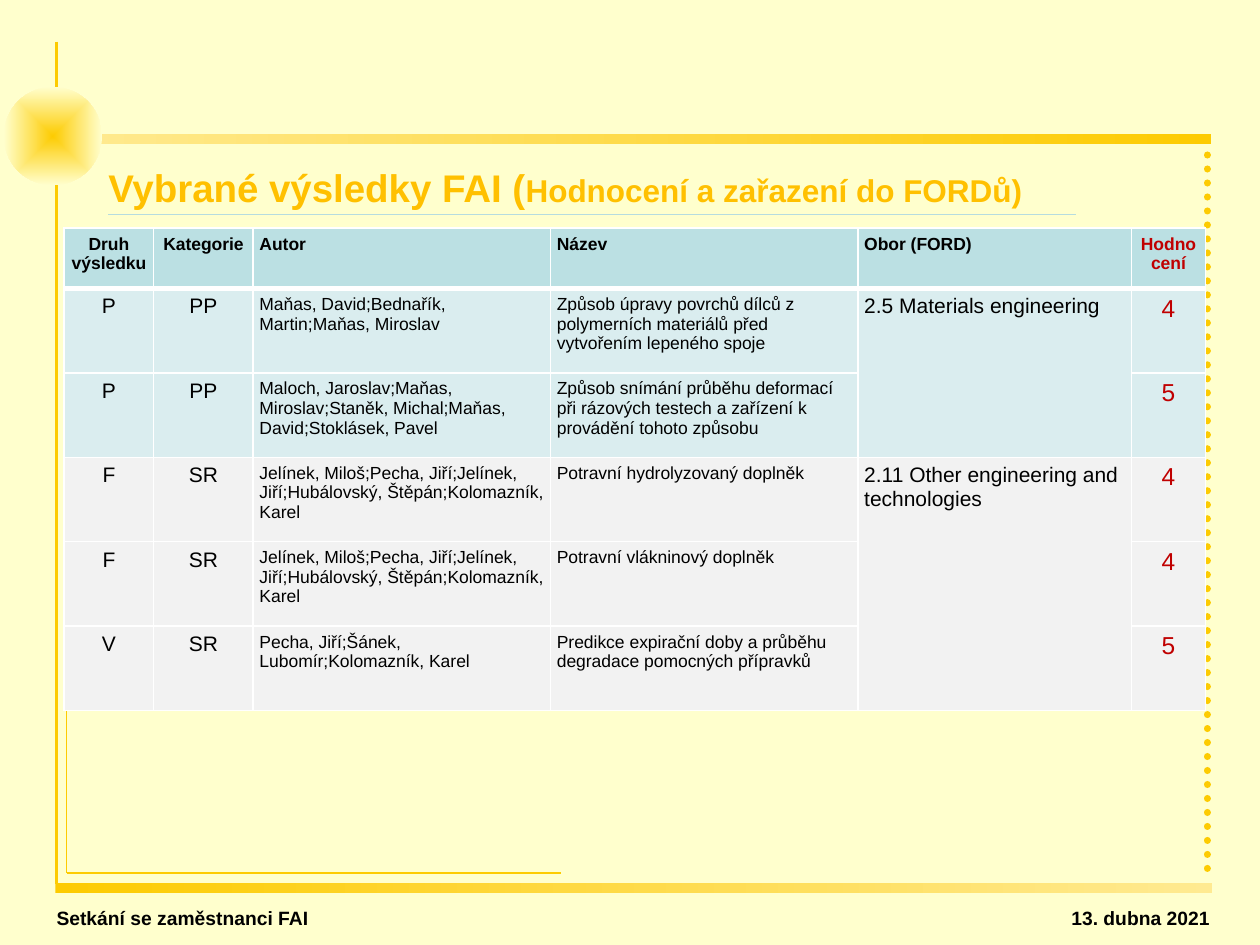
from dataclasses import dataclass

from lxml import etree
from pptx import Presentation
from pptx import util as u
from pptx.dml.color import RGBColor
from pptx.enum import dml, shapes, text
from pptx.oxml import ns


@dataclass(frozen=True)
class Theme:
    """Colours, font and type sizes of the page."""
    paper: str = "FFFFCD"
    gold: str = "FDCB01"
    pale_gold: str = "FFEA91"
    title: str = "FFC000"
    rule: str = "B6DCDF"
    ink: str = "000000"
    score: str = "C00000"
    border: str = "FFFFFF"
    header: str = "BBE0E3"
    patent: str = "DAEDEF"
    other: str = "F2F2F2"
    font: str = "Arial"
    title_size: int = 22
    subtitle_size: int = 18
    score_size: int = 14
    label_size: int = 12
    footer_size: int = 11
    body_size: int = 10


THEME = Theme()
LEFT, CENTER, RIGHT = text.PP_ALIGN.LEFT, text.PP_ALIGN.CENTER, text.PP_ALIGN.RIGHT
COLUMNS, ROWS = 100, 75

HEADINGS = ["Druh výsledku", "Kategorie", "Autor", "Název", "Obor (FORD)", "Hodnocení"]
JELINEK = "Jelínek, Miloš;Pecha, Jiří;Jelínek, Jiří;Hubálovský, Štěpán;Kolomazník, Karel"
RESULTS = [
    ["P", "PP", "Maňas, David;Bednařík, Martin;Maňas, Miroslav",
     "Způsob úpravy povrchů dílců z polymerních materiálů před vytvořením lepeného spoje",
     "2.5 Materials engineering", "4"],
    ["P", "PP", "Maloch, Jaroslav;Maňas, Miroslav;Staněk, Michal;Maňas, David;Stoklásek, Pavel",
     "Způsob snímání průběhu deformací při rázových testech a zařízení k provádění tohoto způsobu",
     "", "5"],
    ["F", "SR", JELINEK, "Potravní hydrolyzovaný doplněk",
     "2.11 Other engineering and technologies", "4"],
    ["F", "SR", JELINEK, "Potravní vlákninový doplněk", "", "4"],
    ["V", "SR", "Pecha, Jiří;Šánek, Lubomír;Kolomazník, Karel",
     "Predikce expirační doby a průběhu degradace pomocných přípravků", "", "5"],
]
COLUMN_WIDTHS = [7.1, 7.9, 23.6, 24.4, 21.7, 5.9]
ROW_HEIGHTS = [4.8] + [6.7] * len(RESULTS)
COLUMN_SIZES = [THEME.label_size] * 2 + [THEME.body_size] * 2 + [THEME.label_size, THEME.score_size]
COLUMN_ALIGNS = [CENTER, CENTER, LEFT, LEFT, LEFT, CENTER]
COLUMN_COLOURS = [THEME.ink] * 5 + [THEME.score]
FIELD_COLUMN = 4
FIELD_SPANS = [(1, 2), (3, 5)]


def assign(target, values):
    """Set every attribute of a format dict on the target."""
    for name, value in values.items():
        setattr(target, name, value)


class PageBuilder:
    """Draws elements on the current page by grid columns and rows."""

    def __init__(self, theme):
        """Start a deck with one coloured title page."""
        self.theme = theme
        self.deck = Presentation()
        self.deck.slide_width, self.deck.slide_height = u.Inches(10), u.Inches(7.5)
        self.page = self.deck.slides.add_slide(self.deck.slide_layouts[5])
        self.paint(self.page.background.fill, theme.paper)

    def across(self, columns):
        """Turn grid columns into a length."""
        return u.Emu(round(self.deck.slide_width * columns / COLUMNS))

    def down(self, rows):
        """Turn grid rows into a length."""
        return u.Emu(round(self.deck.slide_height * rows / ROWS))

    def frame(self, left, top, width, height):
        """Turn a grid rectangle into lengths."""
        return self.across(left), self.down(top), self.across(width), self.down(height)

    def paint(self, fill, colour):
        """Apply a solid fill."""
        fill.solid()
        fill.fore_color.rgb = RGBColor.from_string(colour)

    def add_span(self, para, words, colour, size, align=LEFT, bold=False):
        """Add one formatted span to a paragraph."""
        para.alignment = align
        span = para.add_run()
        span.text = words
        assign(span.font, {"name": self.theme.font, "size": u.Pt(size), "bold": bold})
        span.font.color.rgb = RGBColor.from_string(colour)

    def gradient(self, kind, box, colours, radial=False):
        """Add an outline-free shape with a two-colour gradient."""
        shape = self.page.shapes.add_shape(kind, *self.frame(*box))
        shape.shadow.inherit = False
        shape.line.fill.background()
        shape.fill.gradient()
        shape.fill.gradient_angle = 0
        for position, (stop, colour) in enumerate(zip(shape.fill.gradient_stops, colours)):
            stop.color.rgb = RGBColor.from_string(colour)
            stop.position = position
        if radial:
            linear = shape._element.spPr.find(".//" + ns.qn("a:lin"))
            parent = linear.getparent()
            parent.remove(linear)
            focus = etree.SubElement(parent, ns.qn("a:path"), {"path": "shape"})
            etree.SubElement(focus, ns.qn("a:fillToRect"), dict.fromkeys("ltrb", "50000"))

    def line(self, start, end, colour, width, dotted=False):
        """Add a straight line between two grid points."""
        line = self.page.shapes.add_connector(
            shapes.MSO_CONNECTOR.STRAIGHT, self.across(start[0]), self.down(start[1]),
            self.across(end[0]), self.down(end[1]))
        line.line.color.rgb = RGBColor.from_string(colour)
        line.line.width = u.Pt(width)
        if dotted:
            line.line.dash_style = dml.MSO_LINE.ROUND_DOT
            line.get_or_add_ln().set("cap", "rnd")
        etree.SubElement(line._element.spPr, ns.qn("a:effectLst"))

    def label(self, box, words, align=LEFT):
        """Add a bold footer text."""
        label = self.page.shapes.add_textbox(*self.frame(*box)).text_frame
        label.word_wrap = True
        self.add_span(label.paragraphs[0], words, self.theme.ink, self.theme.footer_size, align, True)

    def title(self, box, spans):
        """Place the title and fill in its differently sized spans."""
        title = self.page.shapes.title
        assign(title, dict(zip(("left", "top", "width", "height"), self.frame(*box))))
        assign(title.text_frame, {
            "word_wrap": True, "auto_size": text.MSO_AUTO_SIZE.NONE,
            "vertical_anchor": text.MSO_ANCHOR.MIDDLE, "margin_bottom": self.down(4)})
        for words, size in spans:
            self.add_span(title.text_frame.paragraphs[0], words, self.theme.title, size, bold=True)

    def border(self, cell, widths):
        """Draw cell borders in left, right, top, bottom order."""
        properties = cell._tc.get_or_add_tcPr()
        for index, (side, width) in enumerate(zip("LRTB", widths)):
            edge = etree.Element(ns.qn("a:ln" + side), w=str(int(u.Pt(width))))
            fill = etree.SubElement(edge, ns.qn("a:solidFill"))
            etree.SubElement(fill, ns.qn("a:srgbClr"), val=self.theme.border)
            properties.insert(index, edge)

    def table(self, left, top):
        """Add the results table with merged field cells."""
        box = self.frame(left, top, sum(COLUMN_WIDTHS), sum(ROW_HEIGHTS))
        table = self.page.shapes.add_table(len(ROW_HEIGHTS), len(COLUMN_WIDTHS), *box).table
        for column, width in zip(table.columns, COLUMN_WIDTHS):
            column.width = self.across(width)
        for row, height in zip(table.rows, ROW_HEIGHTS):
            row.height = self.down(height)
        for first, last in FIELD_SPANS:
            table.cell(first, FIELD_COLUMN).merge(table.cell(last, FIELD_COLUMN))
        margins = dict.fromkeys(
            ("margin_left", "margin_right", "margin_top", "margin_bottom"), self.across(0.5))
        for r, record in enumerate([HEADINGS] + RESULTS):
            heading = r == 0
            shade = self.theme.header if heading else (
                self.theme.patent if record[0] == "P" else self.theme.other)
            for c, words in enumerate(record):
                cell = table.cell(r, c)
                assign(cell, margins)
                self.paint(cell.fill, shade)
                self.border(cell, (1, 1, 3 if r == 1 else 1, 3 if heading else 1))
                if words:
                    size = self.theme.body_size if heading else COLUMN_SIZES[c]
                    self.add_span(cell.text_frame.paragraphs[0], words, COLUMN_COLOURS[c], size,
                                  COLUMN_ALIGNS[c], heading)


def main():
    """Build and save the page."""
    builder = PageBuilder(THEME)
    bar = shapes.MSO_SHAPE.RECTANGLE
    builder.gradient(bar, (4.4, 70.1, 91.8, 0.8), (THEME.gold, THEME.pale_gold))
    builder.gradient(bar, (4.8, 10.6, 91.3, 0.8), (THEME.pale_gold, THEME.gold))
    builder.line((4.5, 3.3), (4.5, 70.2), THEME.gold, 1.5)
    builder.line((95.8, 12.3), (95.8, 69.4), THEME.gold, 4, dotted=True)
    builder.gradient(shapes.MSO_SHAPE.FLOWCHART_SUMMING_JUNCTION, (0.3, 6.9, 7.8, 7.8),
                     (THEME.gold, THEME.paper), radial=True)
    builder.line((5.3, 35.1), (5.3, 69.3), THEME.gold, 0.75)
    builder.line((5.3, 69.3), (44.5, 69.3), THEME.gold, 1)
    builder.label((3.5, 71.4, 44.9, 2.4), "Setkání se zaměstnanci FAI")
    builder.label((79.9, 71.4, 17.1, 2.4), "13. dubna 2021", RIGHT)
    builder.line((8.6, 17), (85.4, 17), THEME.rule, 0.75)
    builder.title((7.6, 11.5, 85.8, 10.2), [
        ("Vybrané výsledky FAI (", THEME.title_size),
        ("Hodnocení a zařazení do FORDů)", THEME.subtitle_size)])
    builder.table(5.1, 18.1)
    builder.deck.save("out.pptx")


if __name__ == "__main__":
    main()
